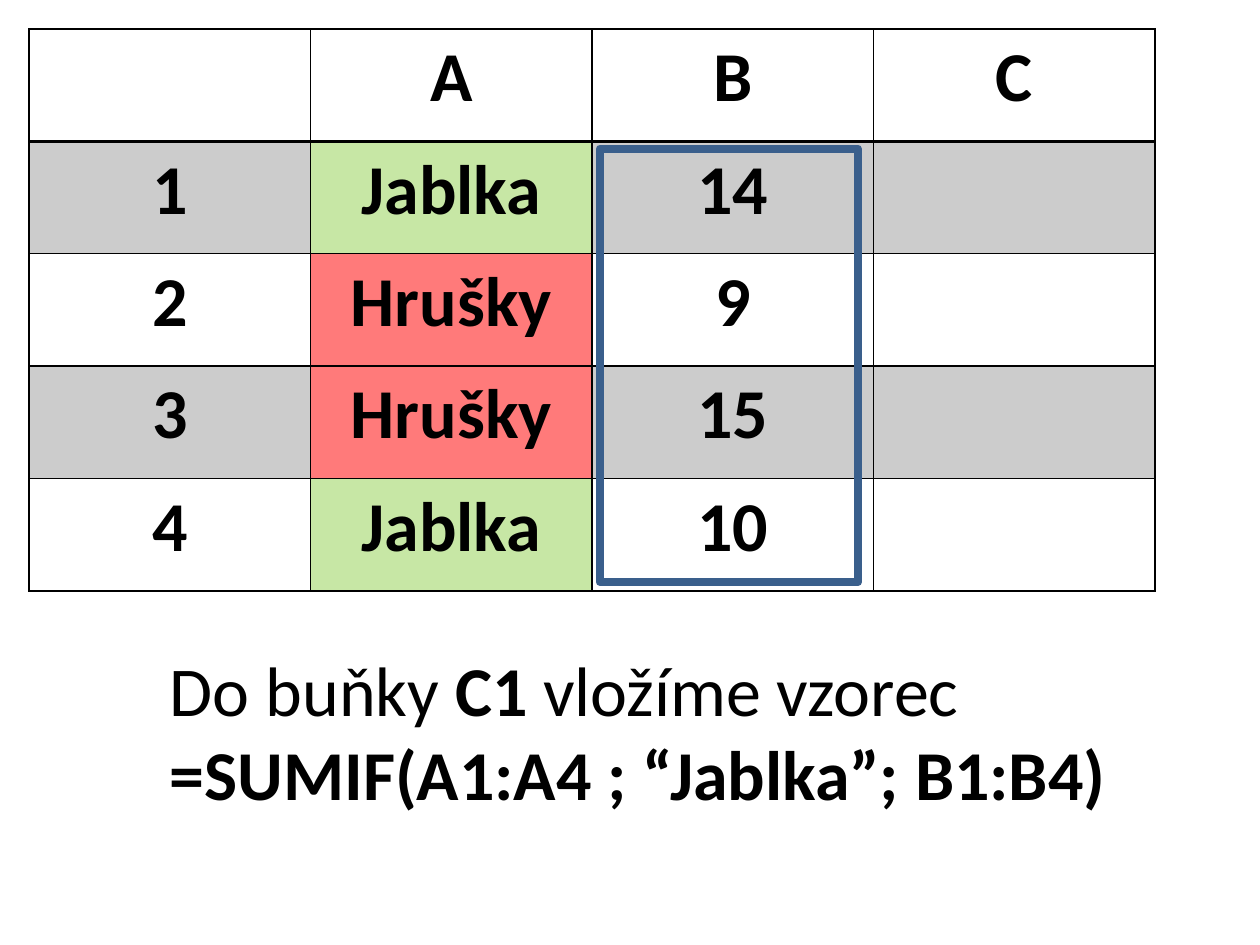
from dataclasses import dataclass

from lxml.etree import SubElement
from pptx import Presentation
from pptx.dml.color import RGBColor
from pptx.enum.shapes import MSO_SHAPE
from pptx.enum.text import MSO_AUTO_SIZE, PP_ALIGN
from pptx.oxml.ns import qn
from pptx.util import Inches, Pt


@dataclass(frozen=True)
class Theme:
    font: str = "Calibri"
    size: int = 40
    ink: str = "000000"
    paper: str = "FFFFFF"
    frame: str = "3A5F8C"
    frame_width: float = 4.5
    grid_width: float = 1
    header_width: float = 2


THEME = Theme()

# Content
SHEET = [
    ["", "A", "B", "C"],
    ["1", "Jablka", "14", ""],
    ["2", "Hrušky", "9", ""],
    ["3", "Hrušky", "15", ""],
    ["4", "Jablka", "10", ""],
]
FRUIT_FILLS = {"Jablka": ("92D050", 51), "Hrušky": ("FF0000", 52)}  # colour, opacity %
BAND_FILL = (THEME.ink, 20)
PLAIN_FILL = (THEME.paper, 100)
INSTRUCTION = [
    ("Do buňky ", False),
    ("C1 ", True),
    ("vložíme vzorec ", False),
    ("=SUMIF(A1:A4 ; “Jablka”; B1:B4)", True),
]

# Layout in inches: left, top, width, height
SHEET_BOX = (0.23, 0.23, 8.94, 4.46)
INSTRUCTION_BOX = (1.25, 5.08, 7.89, 1.45)
SUM_RANGE_BOX = (4.76, 1.18, 2.05, 3.44)


def place(box):
    return [Inches(length) for length in box]


def style_font(font):
    font.name = THEME.font
    font.size = Pt(THEME.size)
    font.color.rgb = RGBColor.from_string(THEME.ink)


def add_borders(cell, row):
    widths = {side: THEME.grid_width for side in ("lnL", "lnR", "lnT", "lnB")}
    if row == 0:
        widths["lnB"] = THEME.header_width
    elif row == 1:
        widths["lnT"] = THEME.header_width
    properties = cell._tc.get_or_add_tcPr()
    for side, width in widths.items():
        line = SubElement(properties, qn(f"a:{side}"), w=str(Pt(width)))
        solid = SubElement(line, qn("a:solidFill"))
        SubElement(solid, qn("a:srgbClr"), val=THEME.ink)


def fill_cell(cell, colour, opacity):
    cell.fill.solid()
    cell.fill.fore_color.rgb = RGBColor.from_string(colour)
    if opacity < 100:
        colour_node = cell._tc.tcPr.find(qn("a:solidFill")).find(qn("a:srgbClr"))
        SubElement(colour_node, qn("a:alpha"), val=str(opacity * 1000))


def add_sheet(slide):
    sheet = slide.shapes.add_table(len(SHEET), len(SHEET[0]), *place(SHEET_BOX)).table
    sheet.first_row = sheet.horz_banding = False
    for row, values in enumerate(SHEET):
        row_fill = BAND_FILL if row % 2 else PLAIN_FILL
        for column, value in enumerate(values):
            cell = sheet.cell(row, column)
            cell.text = value
            label = cell.text_frame.paragraphs[0]
            label.alignment = PP_ALIGN.CENTER
            style_font(label.font)
            label.font.bold = True
            add_borders(cell, row)
            fill_cell(cell, *FRUIT_FILLS.get(value, row_fill))


def add_instruction(slide):
    frame = slide.shapes.add_textbox(*place(INSTRUCTION_BOX)).text_frame
    frame.word_wrap = True
    frame.auto_size = MSO_AUTO_SIZE.SHAPE_TO_FIT_TEXT
    sentence = frame.paragraphs[0]
    style_font(sentence.font)
    for words, bold in INSTRUCTION:
        run = sentence.add_run()
        run.text = words
        run.font.bold = bold


def add_sum_range(slide):
    outline = slide.shapes.add_shape(MSO_SHAPE.RECTANGLE, *place(SUM_RANGE_BOX))
    outline.shadow.inherit = False
    outline.fill.background()
    outline.line.color.rgb = RGBColor.from_string(THEME.frame)
    outline.line.width = Pt(THEME.frame_width)


def main():
    deck = Presentation()
    deck.slide_width, deck.slide_height = Inches(10), Inches(7.5)
    slide = deck.slides.add_slide(deck.slide_layouts[6])
    add_sheet(slide)
    add_instruction(slide)
    add_sum_range(slide)
    deck.save("out.pptx")


if __name__ == "__main__":
    main()
